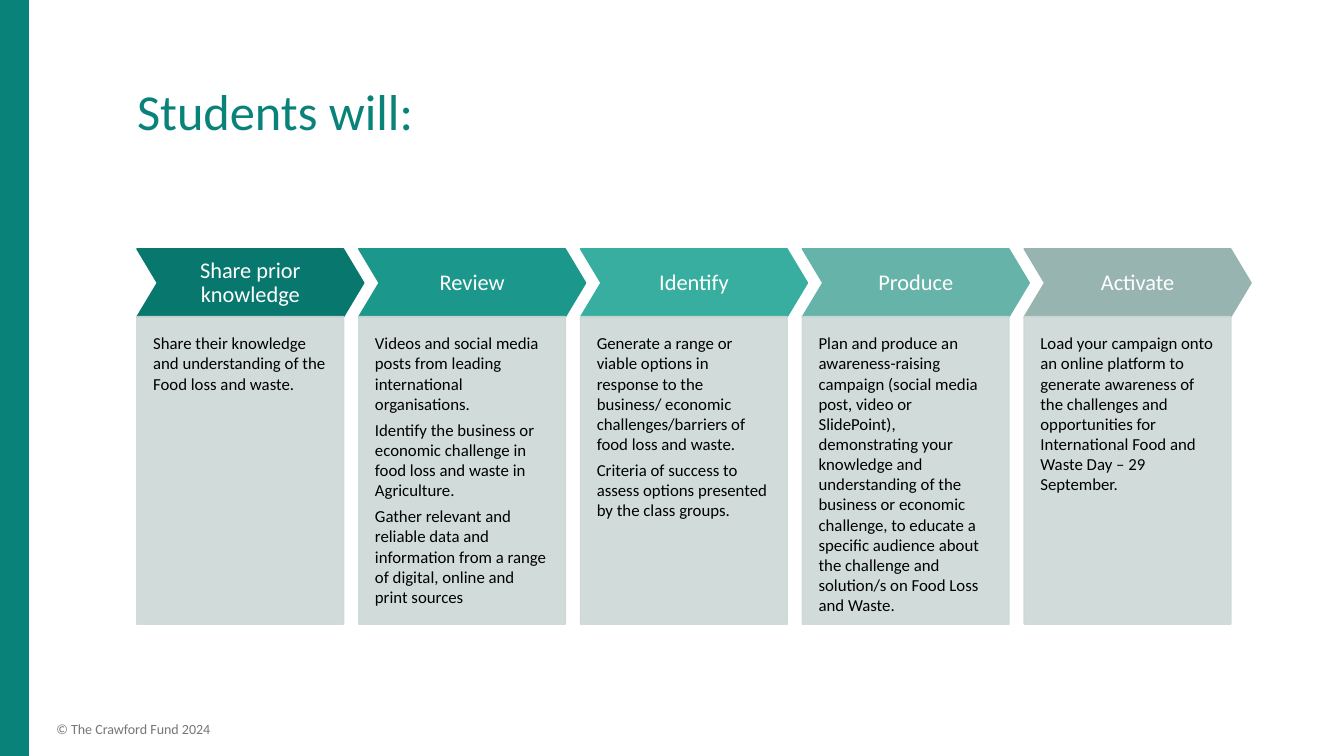
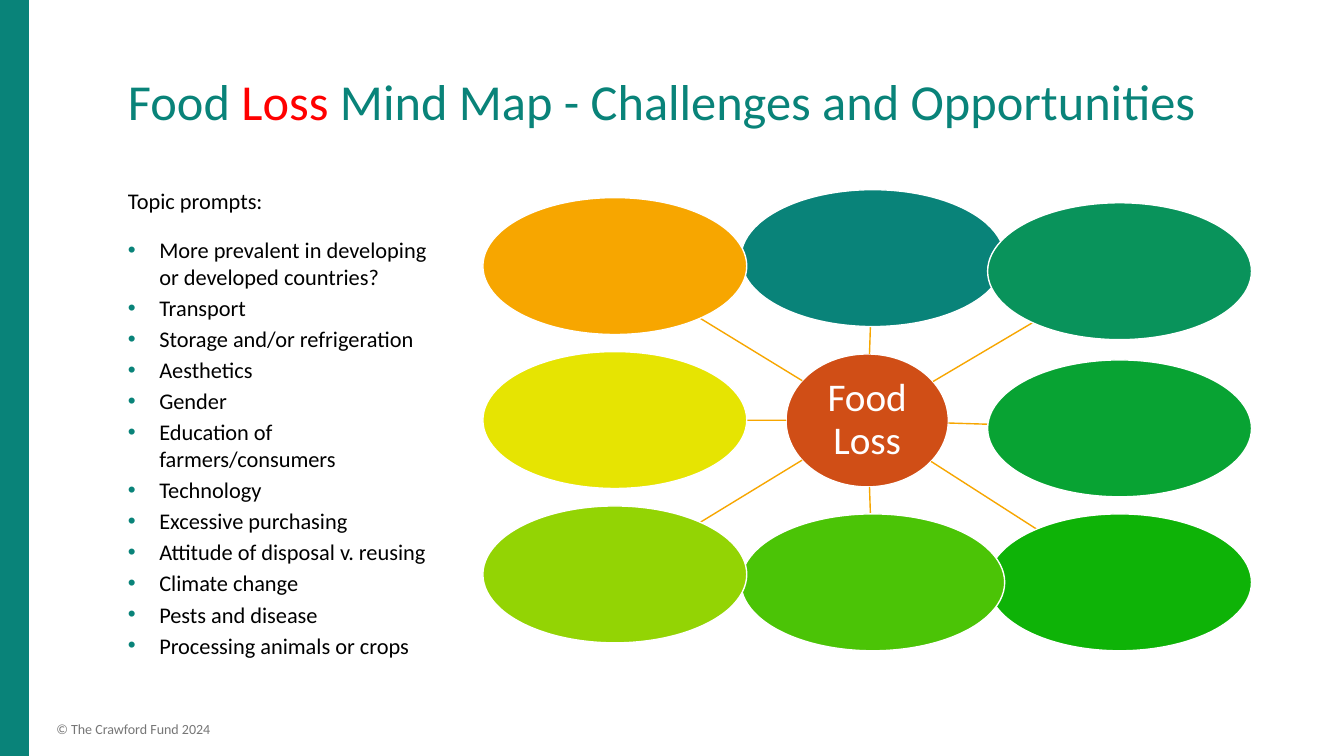
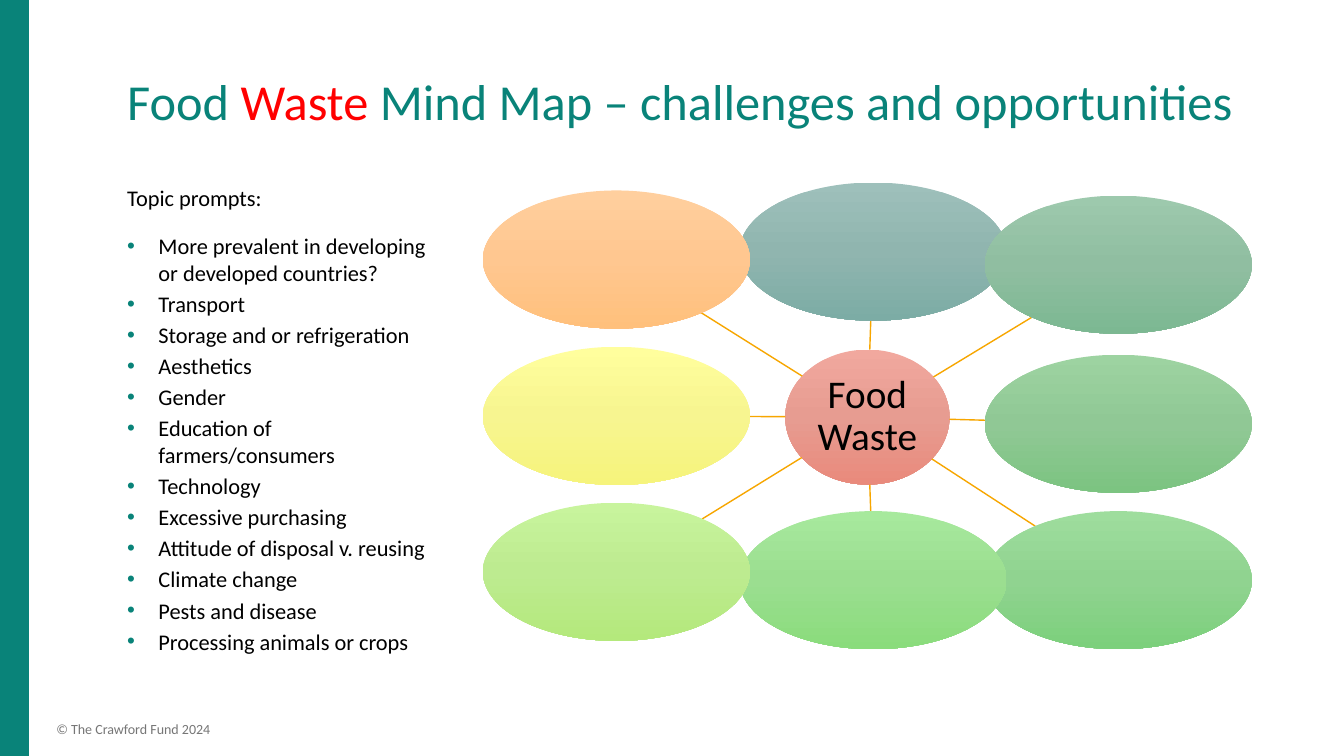
"""Build three lesson slides on food loss and food waste."""
from copy import deepcopy
from math import hypot

from lxml.etree import SubElement
from pptx import Presentation
from pptx.dml.color import RGBColor
from pptx.enum.shapes import MSO_CONNECTOR, MSO_SHAPE
from pptx.enum.text import MSO_ANCHOR, MSO_AUTO_SIZE, PP_ALIGN
from pptx.oxml.ns import qn
from pptx.util import Cm, Pt

COLOURS = {
    "teal": "098379", "red": "FF0000", "white": "FFFFFF", "black": "000000",
    "grey": "767676", "spoke": "F7A600", "panel": "CCD9D7",
    "share": "08776E", "review": "1B978B", "identify": "38AEA0",
    "produce": "66B3A9", "activate": "98B4B0",
    "loss hub": "D04E16", "loss top": "098379", "loss top right": "09935B",
    "loss right": "08A333", "loss bottom right": "0EB307", "loss bottom": "4BC406",
    "loss bottom left": "93D404", "loss left": "E6E402", "loss top left": "F7A600",
    "waste hub": "F1A89E E79C91 E98A7C",
    "waste top": "9EC0BB 90B5AF 7CACA5",
    "waste top right": "9DC9AD 90BEA1 7CB892",
    "waste right": "9DD3A1 90C895 7CC481",
    "waste bottom right": "9EDD9D 90D390 7CD07C",
    "waste bottom": "A7E99D 9BDE90 8ADC7C",
    "waste bottom left": "C8F49D BDEB90 B4E97C",
    "waste left": "FFFE9D F7F590 F6F47C",
    "waste top left": "FFCF9E FFC790 FFC07C",
}
RGB = RGBColor.from_string


def set_all(target, values):
    for name, value in values.items():
        setattr(target, name, value)


def write(paragraph, text, size, colour):
    run = paragraph.add_run()
    run.text = text
    set_all(run.font, {"name": "Calibri", "size": Pt(size)})
    run.font.color.rgb = RGB(COLOURS[colour])


deck = Presentation()
set_all(deck, {"slide_width": Cm(33.87), "slide_height": Cm(19.05)})

titles = [
    (5, (3.2, 2.18, 23.75, 1.5), [("Students will:", "teal")]),
    (1, (2.97, 1.98, 28.55, 1.45), [("Food ", "teal"), ("Loss", "red"),
     (" Mind Map - Challenges and Opportunities", "teal")]),
    (1, (2.95, 2.03, 28.58, 1.42), [("Food ", "teal"), ("Waste", "red"),
     (" Mind Map – challenges and opportunities", "teal")]),
]
for layout, box, parts in titles:
    title = deck.slides.add_slide(deck.slide_layouts[layout]).shapes.title
    set_all(title, dict(zip(("left", "top", "width", "height"), map(Cm, box))))
    set_all(title.text_frame, {"vertical_anchor": MSO_ANCHOR.BOTTOM, "word_wrap": True,
                               "auto_size": MSO_AUTO_SIZE.NONE})
    heading = title.text_frame.paragraphs[0]
    set_all(heading, {"alignment": PP_ALIGN.LEFT, "line_spacing": 0.9})
    for text, colour in parts:
        write(heading, text, 36, colour)

steps_slide, loss_slide, waste_slide = deck.slides

band = steps_slide.shapes.add_shape(MSO_SHAPE.RECTANGLE, Cm(-0.03), Cm(-0.03), Cm(0.76), Cm(19.12))
band.shadow.inherit = False
band.fill.solid()
band.fill.fore_color.rgb = RGB(COLOURS["teal"])
band.line.fill.background()
footer = steps_slide.shapes.add_textbox(Cm(1.17), Cm(18.03), Cm(17.4), Cm(0.69))
footer.text_frame.word_wrap = True
write(footer.text_frame.paragraphs[0], "© The Crawford Fund 2024", 10, "grey")
for shared in (band, footer):
    deck.slide_master.shapes.element.append(shared.element)

steps = [
    ("Share prior knowledge", "share",
     ["Share their knowledge and understanding of the Food loss and waste."]),
    ("Review", "review",
     ["Videos and social media posts from leading international organisations.",
      "Identify the business or economic challenge in food loss and waste in Agriculture.",
      "Gather relevant and reliable data and information from a range of digital, "
      "online and print sources"]),
    ("Identify", "identify",
     ["Generate a range or viable options in response to the business/ economic "
      "challenges/barriers of food loss and waste.",
      "Criteria of success to assess options presented by the class groups."]),
    ("Produce", "produce",
     ["Plan and produce an awareness-raising campaign (social media post, video or "
      "SlidePoint), demonstrating your knowledge and understanding of the business or "
      "economic challenge, to educate a specific audience about the challenge and "
      "solution/s on Food Loss and Waste."]),
    ("Activate", "activate",
     ["Load your campaign onto an online platform to generate awareness of the "
      "challenges and opportunities for International Food and Waste Day – 29 September."]),
]
chevron_format = {"word_wrap": True, "vertical_anchor": MSO_ANCHOR.MIDDLE,
                  "margin_left": Cm(0.2), "margin_right": Cm(0.2),
                  "margin_top": Cm(0.2), "margin_bottom": Cm(0.2)}
panel_format = {"word_wrap": True, "vertical_anchor": MSO_ANCHOR.TOP,
                "margin_left": Cm(0.41), "margin_right": Cm(0.41),
                "margin_top": Cm(0.41), "margin_bottom": Cm(0.81)}
for index, (step, step_colour, details) in enumerate(steps):
    left = Cm(3.45 + 5.59 * index)
    chevron = steps_slide.shapes.add_shape(MSO_SHAPE.CHEVRON, left, Cm(6.27), Cm(5.72), Cm(1.72))
    chevron.adjustments[0] = 0.3
    panel = steps_slide.shapes.add_shape(MSO_SHAPE.RECTANGLE, left, Cm(7.98), Cm(5.21), Cm(7.75))
    for part, colour, text_format in ((chevron, step_colour, chevron_format),
                                      (panel, "panel", panel_format)):
        part.shadow.inherit = False
        part.fill.solid()
        part.fill.fore_color.rgb = part.line.color.rgb = RGB(COLOURS[colour])
        part.line.width = Pt(1)
        set_all(part.text_frame, text_format)
    for tint in panel.element.spPr.iter(qn("a:srgbClr")):
        SubElement(tint, qn("a:alpha"), val="90000")
    label = chevron.text_frame.paragraphs[0]
    set_all(label, {"alignment": PP_ALIGN.CENTER, "line_spacing": 0.9})
    write(label, step, 16, "white")
    for number, detail in enumerate(details):
        frame = panel.text_frame
        paragraph = frame.add_paragraph() if number else frame.paragraphs[0]
        set_all(paragraph, {"alignment": PP_ALIGN.LEFT, "space_after": Pt(4.2)})
        write(paragraph, detail, 12, "black")

maps = [
    {"slide": loss_slide, "topic": "loss", "hub": (19.81, 8.92, 4.09, 3.35),
     "text": "Food Loss", "text colour": "white", "size": (6.65, 3.45),
     "columns": {"left": 12.17, "middle": 18.67, "right": 24.89},
     "rows": {"left": (4.98, 8.86, 12.75), "middle": (4.78, 0, 12.95),
              "right": (5.11, 9.07, 12.95)},
     "prompts box": (2.97, 4.6, 8.1, 12.47), "storage": "Storage and/or refrigeration"},
    {"slide": waste_slide, "topic": "waste", "hub": (19.79, 8.81, 4.14, 3.4),
     "text": "Food Waste", "text colour": "black", "size": (6.73, 3.48),
     "columns": {"left": 12.17, "middle": 18.64, "right": 24.82},
     "rows": {"left": (4.8, 8.74, 12.67), "middle": (4.6, 0, 12.88),
              "right": (4.93, 8.94, 12.88)},
     "prompts box": (2.95, 4.5, 8.31, 12.22), "storage": "Storage and or refrigeration"},
]
ring = [("top", "middle", 0), ("top right", "right", 0), ("right", "right", 1),
        ("bottom right", "right", 2), ("bottom", "middle", 2),
        ("bottom left", "left", 2), ("left", "left", 1), ("top left", "left", 0)]
hub_format = {"word_wrap": True, "vertical_anchor": MSO_ANCHOR.MIDDLE,
              "margin_left": Cm(0.05), "margin_right": Cm(0.05),
              "margin_top": Cm(0.05), "margin_bottom": Cm(0.05)}
for mind_map in maps:
    shapes = mind_map["slide"].shapes
    hub_left, hub_top, hub_width, hub_height = mind_map["hub"]
    hub_x, hub_y = hub_left + hub_width / 2, hub_top + hub_height / 2
    width, height = mind_map["size"]
    bubbles = [("hub", mind_map["hub"])]
    for place, column, row in ring:
        bubbles.append((place, (mind_map["columns"][column], mind_map["rows"][column][row],
                                width, height)))

    for place, box in bubbles:
        if place != "hub":
            run_x, run_y = box[0] + width / 2 - hub_x, box[1] + height / 2 - hub_y
            start = 1 / hypot(run_x / hub_width * 2, run_y / hub_height * 2)
            end = 1 - 1 / hypot(run_x / width * 2, run_y / height * 2)
            spoke = shapes.add_connector(
                MSO_CONNECTOR.STRAIGHT,
                Cm(hub_x + run_x * start), Cm(hub_y + run_y * start),
                Cm(hub_x + run_x * end), Cm(hub_y + run_y * end))
            spoke.line.color.rgb = RGB(COLOURS["spoke"])
            spoke.line.width = Pt(1)
            SubElement(spoke.element.spPr, qn("a:effectLst"))
        bubble = shapes.add_shape(MSO_SHAPE.OVAL, *map(Cm, box))
        bubble.shadow.inherit = False
        tones = COLOURS[f"{mind_map['topic']} {place}"].split()
        if len(tones) == 1:
            bubble.fill.solid()
            bubble.fill.fore_color.rgb = RGB(tones[0])
            bubble.line.color.rgb = RGB(COLOURS["white"])
            bubble.line.width = Pt(1)
        else:
            bubble.fill.gradient()
            bubble.fill.gradient_angle = 270
            stops = bubble.element.spPr.find(".//" + qn("a:gsLst"))
            stops.insert(1, deepcopy(stops[0]))
            for stop, tone, position in zip(bubble.fill.gradient_stops, tones, (0, 0.5, 1)):
                stop.color.rgb = RGB(tone)
                stop.position = position
            bubble.line.fill.background()
        if place == "hub":
            set_all(bubble.text_frame, hub_format)
            centre = bubble.text_frame.paragraphs[0]
            set_all(centre, {"alignment": PP_ALIGN.CENTER, "line_spacing": 0.9})
            write(centre, mind_map["text"], 28, mind_map["text colour"])

    prompts = mind_map["slide"].placeholders[1]
    set_all(prompts, dict(zip(("left", "top", "width", "height"),
                              map(Cm, mind_map["prompts box"]))))
    set_all(prompts.text_frame, {"word_wrap": True, "auto_size": MSO_AUTO_SIZE.NONE})
    lines = ["Topic prompts:", "More prevalent in developing or developed countries?",
             "Transport", mind_map["storage"], "Aesthetics", "Gender",
             "Education of farmers/consumers", "Technology", "Excessive purchasing",
             "Attitude of disposal v. reusing", "Climate change", "Pests and disease",
             "Processing animals or crops"]
    for number, line in enumerate(lines):
        frame = prompts.text_frame
        paragraph = frame.add_paragraph() if number else frame.paragraphs[0]
        properties = paragraph._p.get_or_add_pPr()
        indent = Cm(0.79) if number else 0
        properties.set("marL", str(indent))
        properties.set("indent", str(-indent))
        if number:
            bullet_colour = SubElement(properties, qn("a:buClr"))
            SubElement(bullet_colour, qn("a:srgbClr"), val=COLOURS["teal"])
            SubElement(properties, qn("a:buFont"), typeface="Arial")
            SubElement(properties, qn("a:buChar"), char="•")
        else:
            SubElement(properties, qn("a:buNone"))
        paragraph.space_before = Pt({0: 0, 1: 15.5}.get(number, 3))
        write(paragraph, line, 16, "black")

deck.save("out.pptx")
